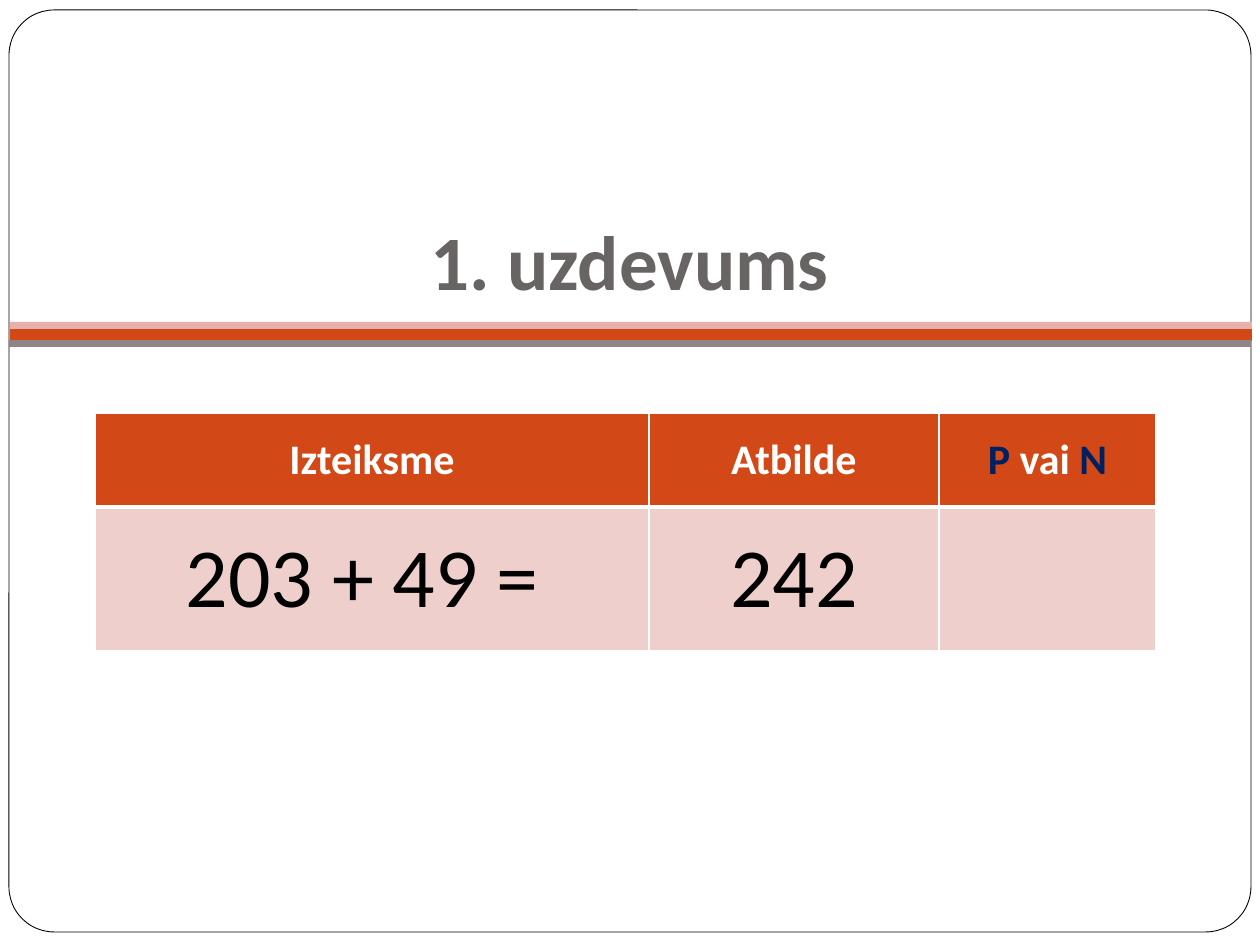
from lxml import etree
from pptx import Presentation
from pptx.dml.color import RGBColor
from pptx.enum.shapes import MSO_SHAPE
from pptx.enum.text import MSO_ANCHOR, PP_ALIGN
from pptx.oxml.ns import qn
from pptx.util import Emu, Pt

PX = 914400 / 126
W, H = 1260, 945
FONT = "Calibri"
RECT, ROUND = MSO_SHAPE.RECTANGLE, MSO_SHAPE.ROUNDED_RECTANGLE
CENTER, MIDDLE, BOTTOM = PP_ALIGN.CENTER, MSO_ANCHOR.MIDDLE, MSO_ANCHOR.BOTTOM

WHITE = RGBColor(0xFF, 0xFF, 0xFF)
BLACK = RGBColor(0x00, 0x00, 0x00)
ORANGE = RGBColor(0xD3, 0x48, 0x17)
PINK = RGBColor(0xE6, 0xB1, 0xAC)
PALE_PINK = RGBColor(0xEF, 0xCF, 0xCC)
GRAY = RGBColor(0x91, 0x84, 0x85)
TITLE_GRAY = RGBColor(0x69, 0x64, 0x64)
NAVY = RGBColor(0x00, 0x20, 0x60)


def px(n):
    return Emu(round(n * PX))


def add_box(s, shape, x, y, w, h, fill):
    sp = s.shapes.add_shape(shape, px(x), px(y), px(w), px(h))
    sp.shadow.inherit = False
    sp.fill.solid()
    sp.fill.fore_color.rgb = fill
    sp.line.fill.background()
    return sp


def format_run(r, size, color, bold):
    r.font.name, r.font.size, r.font.bold = FONT, Pt(size), bold
    r.font.color.rgb = color


def add_frame(s, x, y, w, h):
    # Rounded page outline
    sp = add_box(s, ROUND, x, y, w, h, WHITE)
    sp.adjustments[0] = 0.049
    sp.line.color.rgb = BLACK
    sp.line.width = Pt(0.5)

    # Three stripes below the title
    for dx, dy, sh, color in ((1, 318, 13, ORANGE), (1, 312, 7, PINK),
                              (0, 330, 7, GRAY)):
        add_box(s, RECT, x + dx, y + dy, w, sh, color)


def add_title(s, text, x, y, w, h):
    sp = s.shapes.title
    sp.left, sp.top, sp.width, sp.height = px(x), px(y), px(w), px(h)
    sp.element.getparent().append(sp.element)  # bring in front of the frame
    tf = sp.text_frame
    tf.margin_left = tf.margin_right = tf.margin_bottom = Pt(7.2)
    tf.margin_top = Pt(3.6)
    tf.vertical_anchor = BOTTOM
    tf.text = text
    p = tf.paragraphs[0]
    p.alignment = CENTER
    format_run(p.runs[0], 44, TITLE_GRAY, True)


def set_borders(cell, bottom):
    tcPr = cell._tc.get_or_add_tcPr()
    for i, (side, width) in enumerate(
            (("L", 1), ("R", 1), ("T", 1), ("B", bottom))):
        ln = etree.Element(qn(f"a:ln{side}"), w=str(Pt(width)))
        fill = etree.SubElement(ln, qn("a:solidFill"))
        etree.SubElement(fill, qn("a:srgbClr"), val=str(WHITE))
        tcPr.insert(i, ln)


def add_table(s, x, y, cols, rows):
    heights = [h for h, *_ in rows]
    table = s.shapes.add_table(len(rows), len(cols), px(x), px(y),
                               px(sum(cols)), px(sum(heights))).table
    for col, w in zip(table.columns, cols):
        col.width = px(w)
    for row, (h, fill, size, bold, bottom, cells) in zip(table.rows, rows):
        row.height = px(h)
        for cell, parts in zip(row.cells, cells):
            cell.fill.solid()
            cell.fill.fore_color.rgb = fill
            cell.vertical_anchor = MIDDLE
            set_borders(cell, bottom)
            p = cell.text_frame.paragraphs[0]
            p.alignment = CENTER
            for text, color in parts:
                r = p.add_run()
                r.text = text
                format_run(r, size, color, bold)


def main():
    prs = Presentation()
    prs.slide_width, prs.slide_height = px(W), px(H)
    s = prs.slides.add_slide(prs.slide_layouts[5])
    add_frame(s, 9, 10, 1242, 922)
    add_title(s, "1. uzdevums", 5, 131, 1250, 188)

    # Row: height, fill, text size, bold, bottom border, cells of coloured runs
    header = [[("Izteiksme", WHITE)], [("Atbilde", WHITE)],
              [("P ", NAVY), ("vai ", WHITE), ("N", NAVY)]]
    task = [[("203 + 49 = ", BLACK)], [("242", BLACK)], []]
    add_table(s, 95, 413, (554, 290, 217),
              ((94, ORANGE, 24, True, 3, header),
               (144, PALE_PINK, 48, False, 1, task)))
    prs.save("out.pptx")


if __name__ == "__main__":
    main()
